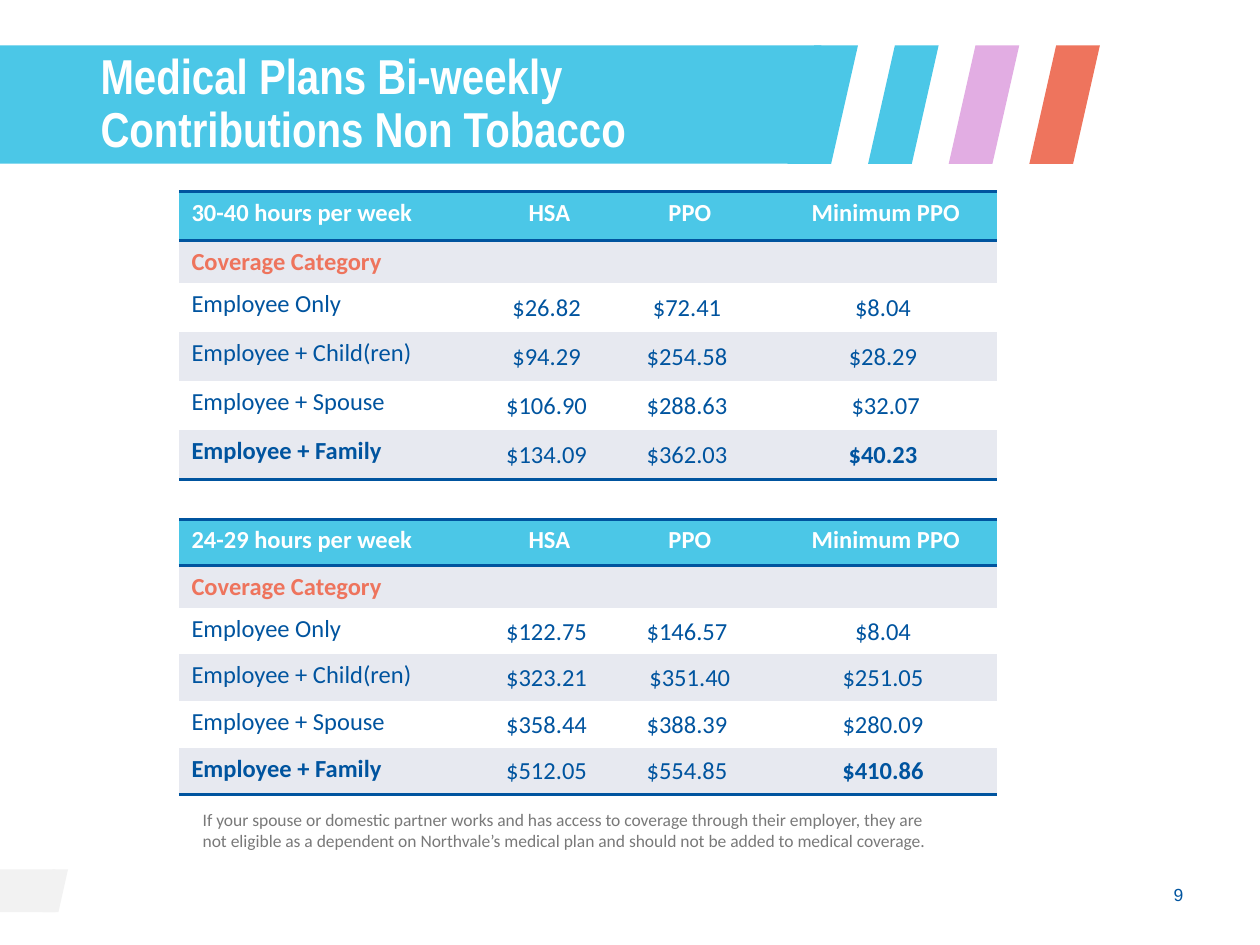
from lxml import etree
from pptx import Presentation
from pptx.dml.color import RGBColor
from pptx.enum.shapes import MSO_SHAPE
from pptx.enum.text import MSO_ANCHOR, PP_ALIGN
from pptx.oxml.ns import qn
from pptx.util import Inches, Pt

RECTANGLE = MSO_SHAPE.RECTANGLE
PARALLELOGRAM = MSO_SHAPE.PARALLELOGRAM
TOP, MIDDLE = MSO_ANCHOR.TOP, MSO_ANCHOR.MIDDLE
LEFT, CENTER, RIGHT = PP_ALIGN.LEFT, PP_ALIGN.CENTER, PP_ALIGN.RIGHT

CYAN, PINK, CORAL = "4BC7E7", "E2ADE3", "EE745D"
NAVY, GRAY, BAND, PALE, WHITE = "00549F", "797979", "E7E9F0", "F2F2F2", "FFFFFF"
NO_TABLE_STYLE = "{2D5ABB26-0587-4C30-8999-92F81FD0307C}"

COLUMN_WIDTHS = (2.5, 0.88, 1.35, 1.76)
PLAN_NAMES = ("HSA", "PPO", "Minimum PPO")
FULL_TIME = (
    ("Employee Only", "$26.82 ", "$72.41 ", "$8.04 "),
    ("Employee + Child(ren)", "$94.29 ", "$254.58 ", "$28.29 "),
    ("Employee + Spouse", "$106.90 ", "$288.63 ", "$32.07"),
    ("Employee + Family", "$134.09 ", "$362.03 ", "$40.23 "),
)
PART_TIME = (
    ("Employee Only", "$122.75 ", "$146.57 ", "$8.04 "),
    ("Employee + Child(ren)", "$323.21 ", "$351.40", "$251.05 "),
    ("Employee + Spouse", "$358.44 ", "$388.39 ", "$280.09 "),
    ("Employee + Family", "$512.05 ", "$554.85 ", "$410.86 "),
)
FOOTNOTE = (
    "If your spouse or domestic partner works and has access to coverage "
    "through their employer, they are\n"
    "not eligible as a dependent on Northvale’s medical plan and should not "
    "be added to medical coverage."
)


def color(hex_value):
    return RGBColor.from_string(hex_value)


class SlideBuilder:
    def __init__(self, slide):
        self.slide = slide

    def shape(self, kind, left, top, width, height, fill):
        shape = self.slide.shapes.add_shape(
            kind, Inches(left), Inches(top), Inches(width), Inches(height))
        shape.shadow.inherit = False
        shape.fill.solid()
        shape.fill.fore_color.rgb = color(fill)
        shape.line.fill.background()
        if kind == PARALLELOGRAM:
            shape.adjustments[0] = 0.38

    def style_text(self, text_frame, text, size, font, ink, bold=False,
                   align=LEFT, spacing=None):
        text_frame.text = text
        for paragraph in text_frame.paragraphs:
            paragraph.alignment = align
            if spacing:
                paragraph.line_spacing = spacing
            for run in paragraph.runs:
                run.font.name = font
                run.font.size = Pt(size)
                run.font.bold = bold
                run.font.color.rgb = color(ink)

    def text(self, left, top, width, height, text, size, font, ink,
             anchor=TOP, **style):
        box = self.slide.shapes.add_textbox(
            Inches(left), Inches(top), Inches(width), Inches(height))
        box.text_frame.word_wrap = True
        box.text_frame.vertical_anchor = anchor
        self.style_text(box.text_frame, text, size, font, ink, **style)

    def cell(self, cell, text, fill, ink, bold=False, align=LEFT, borders=()):
        self.style_text(cell.text_frame, text, 14, "Calibri", ink, bold, align)
        properties = cell._tc.get_or_add_tcPr()
        for side in borders:
            line = etree.SubElement(properties, qn(f"a:{side}"), w=str(Pt(2)))
            line_fill = etree.SubElement(line, qn("a:solidFill"))
            etree.SubElement(line_fill, qn("a:srgbClr"), val=NAVY)
        cell.fill.solid()
        cell.fill.fore_color.rgb = color(fill)

    def contribution_table(self, top, hours, contributions, row_height, category_height):
        heights = [row_height, category_height] + [row_height] * len(contributions)
        table = self.slide.shapes.add_table(
            len(heights), len(COLUMN_WIDTHS), Inches(1.42), Inches(top),
            Inches(sum(COLUMN_WIDTHS)), Inches(sum(heights))).table
        table._tbl.tblPr.find(qn("a:tableStyleId")).text = NO_TABLE_STYLE
        for column, width in zip(table.columns, COLUMN_WIDTHS):
            column.width = Inches(width)
        for row, height in zip(table.rows, heights):
            row.height = Inches(height)

        # Header and category rows
        for index, heading in enumerate((hours, *PLAN_NAMES)):
            self.cell(table.cell(0, index), heading, CYAN, WHITE, True,
                      CENTER if index else LEFT, ("lnT", "lnB"))
        last_column = len(COLUMN_WIDTHS) - 1
        category = table.cell(1, 0)
        category.merge(table.cell(1, last_column))
        self.cell(category, "Coverage Category", BAND, CORAL, True)

        # Banded contribution rows; the last one is emphasised at both ends
        for row_index, values in enumerate(contributions, start=2):
            is_last = row_index == len(heights) - 1
            for index, value in enumerate(values):
                cell = table.cell(row_index, index)
                if index:
                    cell.margin_left = cell.margin_right = Inches(0.01)
                    cell.margin_top, cell.margin_bottom = Inches(0.01), 0
                    cell.vertical_anchor = MIDDLE
                self.cell(cell, value, BAND if row_index % 2 else WHITE, NAVY,
                          is_last and index in (0, last_column),
                          CENTER if index else LEFT,
                          ("lnB",) if is_last else ())


def main():
    presentation = Presentation()
    presentation.slide_width, presentation.slide_height = Inches(10), Inches(7.5)
    builder = SlideBuilder(presentation.slides.add_slide(presentation.slide_layouts[6]))

    # Footer tab
    builder.shape(PARALLELOGRAM, 0.34, 6.9, 0.2, 0.34, PALE)
    builder.shape(RECTANGLE, 0, 6.9, 0.44, 0.34, PALE)

    # Title banner with slanted stripes
    builder.shape(RECTANGLE, 0, 0.36, 6.52, 0.94, CYAN)
    for index, fill in enumerate((CYAN, CYAN, PINK, CORAL)):
        builder.shape(PARALLELOGRAM, 6.25 + 0.64 * index, 0.36, 0.56, 0.94, fill)
    builder.text(0.7, 0.61, 5.83, 0.45,
                 "Medical Plans Bi-weekly Contributions Non Tobacco",
                 28, "Arial Narrow", WHITE, MIDDLE, bold=True, spacing=0.9)

    # Contribution tables
    builder.contribution_table(1.52, "30-40 hours per week", FULL_TIME, 0.39, 0.33)
    builder.contribution_table(4.12, "24-29 hours per week", PART_TIME, 0.37, 0.3)

    # Footnote and page number
    builder.text(1.51, 6.37, 6.41, 0.44, FOOTNOTE, 10, "Calibri", GRAY)
    builder.text(7.24, 6.9, 2.25, 0.4, "9", 10, "Arial", NAVY, MIDDLE, align=RIGHT)

    presentation.save("out.pptx")


if __name__ == "__main__":
    main()
